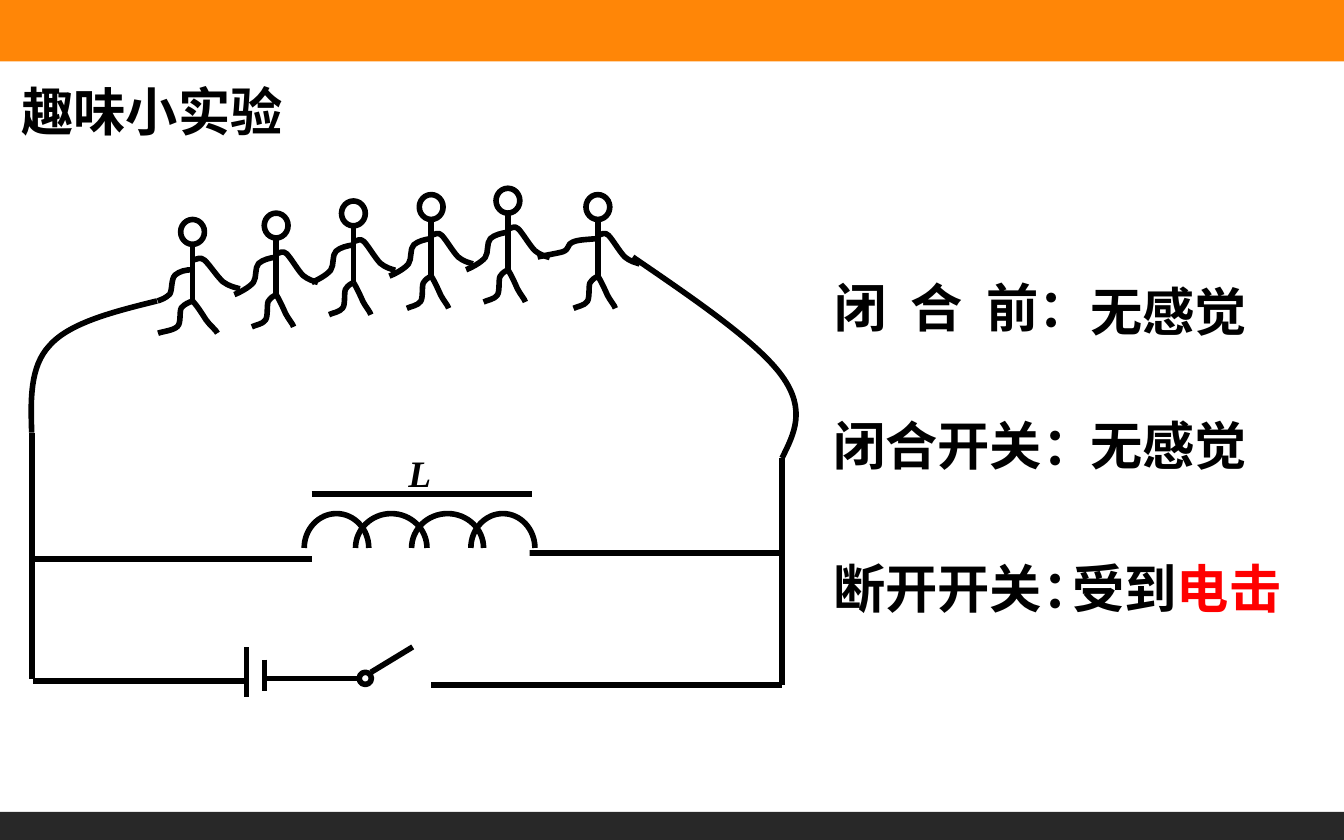
from lxml import etree
from pptx import Presentation
from pptx.dml.color import RGBColor
from pptx.enum.shapes import MSO_CONNECTOR, MSO_SHAPE
from pptx.oxml.ns import qn
from pptx.util import Cm, Pt

STRAIGHT = MSO_CONNECTOR.STRAIGHT
RECTANGLE = MSO_SHAPE.RECTANGLE
OVAL = MSO_SHAPE.OVAL

ORANGE = RGBColor(0xFF, 0x86, 0x07)
DARK_GRAY = RGBColor(0x28, 0x28, 0x28)
BLACK = RGBColor(0, 0, 0)
WHITE = RGBColor(0xFF, 0xFF, 0xFF)
RED = RGBColor(0xFF, 0, 0)

LINE_WIDTH = Pt(3)

# Limbs are Bezier chains in cm: arms start from the neck, legs from the hip.
LEFT_ARM = [(0, .36), (-.13, .38), (-.25, .41), (-.33, .48), (-.41, .56),
            (-.36, .74), (-.43, .84), (-.51, .94), (-.71, 1.04), (-.79, 1.07)]
FIRST_LEFT_ARM = [(0, .48), (-.13, .48), (-.25, .51), (-.33, .58), (-.41, .66),
                  (-.38, .86), (-.43, .94), (-.51, 1.02), (-.58, 1.04), (-.66, 1.07)]
LAST_LEFT_ARM = [(0, .36), (-.2, .38), (-.38, .38), (-.48, .43), (-.58, .46),
                 (-.53, .56), (-.66, .61), (-.76, .64), (-1.07, .69), (-1.14, .71)]
RIGHT_ARM = [(0, .3), (.08, .28), (.13, .23), (.2, .3), (.28, .38),
             (.41, .61), (.51, .71), (.61, .79), (.69, .81), (.79, .84)]
LEFT_LEG = [(0, 0), (-.05, .03), (-.1, .05), (-.15, .13), (-.18, .2),
            (-.15, .41), (-.2, .48), (-.25, .56), (-.41, .58), (-.46, .61)]
RIGHT_LEG = [(0, 0), (.08, .13), (.13, .25), (.18, .36), (.23, .46), (.32, .56), (.33, .61)]
TORSO = 1.07
HEAD_WIDTH, HEAD_HEIGHT = .45, .47

MIDDLE_NECKS = [(5.22, 4.5), (6.68, 4.27), (8.15, 4.15), (9.6, 4.03)]

LEFT_LEAD = [(.6, 8.18), (.58, 7.57), (.56, 6.93), (.94, 6.53),
             (1.32, 6.1), (2.16, 5.89), (2.97, 5.69)]
RIGHT_LEAD = [(14.78, 8.66), (15.01, 8.2), (15.24, 7.75), (14.78, 7.11),
              (14.33, 6.48), (13.13, 5.66), (11.96, 4.86)]
WIRES = [
    (4.66, 12.24, 4.66, 13.18),   # battery, long plate
    (5, 12.47, 5, 13.06),         # battery, short plate
    (5, 12.83, 6.78, 12.83),
    (7.01, 12.71, 7.8, 12.23),    # switch lever
    (8.15, 12.95, 14.78, 12.95),
    (4.67, 12.87, .62, 12.87),
    (.6, 12.83, .6, 8.18),
    (.6, 10.57, 5.89, 10.57),
    (7.85, 10.45, 14.78, 10.45),
    (14.78, 8.66, 14.78, 12.95),
    (5.89, 9.34, 10.06, 9.34),    # iron core
]
COIL_TOP, COIL_BOTTOM = 9.71, 10.36
COIL_TURNS = [(5.75, 6.97), (6.72, 8.07), (7.78, 9.14), (8.9, 10.11)]

TEXT_HEIGHT = 1.45


def add_block(slide, left, top, width, height, color):
    shape = slide.shapes.add_shape(RECTANGLE, Cm(left), Cm(top), Cm(width), Cm(height))
    shape.shadow.inherit = False
    shape.fill.solid()
    shape.fill.fore_color.rgb = color
    shape.line.fill.background()


def style_outline(shape):
    shape.shadow.inherit = False
    shape.fill.background()
    shape.line.color.rgb = BLACK
    shape.line.width = LINE_WIDTH


def add_ring(slide, left, top, width, height):
    style_outline(slide.shapes.add_shape(OVAL, Cm(left), Cm(top), Cm(width), Cm(height)))


def add_wire(slide, x1, y1, x2, y2):
    wire = slide.shapes.add_connector(STRAIGHT, Cm(x1), Cm(y1), Cm(x2), Cm(y2))
    wire.line.color.rgb = BLACK
    wire.line.width = LINE_WIDTH
    etree.SubElement(wire._element.spPr, qn("a:effectLst"))


def add_curve(slide, chain):
    """Draw a chain of cubic Beziers: each three line segments become one curve."""
    start, *controls = [(Cm(x), Cm(y)) for x, y in chain]
    builder = slide.shapes.build_freeform(*start)
    builder.add_line_segments(controls, close=False)
    shape = builder.convert_to_shape()
    outline = next(shape._element.iter(qn("a:path")))
    segments = outline.findall(qn("a:lnTo"))
    for first in range(0, len(segments), 3):
        curve = etree.SubElement(outline, qn("a:cubicBezTo"))
        for segment in segments[first:first + 3]:
            curve.append(segment[0])
            outline.remove(segment)
    style_outline(shape)


def add_limb(slide, x, y, limb, stretch=1):
    add_curve(slide, [(x + dx * stretch, y + dy) for dx, dy in limb])


def add_person(slide, x, neck, left_arm=LEFT_ARM, stride=1, reach=1):
    hip = neck + TORSO
    add_wire(slide, x, neck, x, hip)
    add_ring(slide, x - HEAD_WIDTH / 2, neck - HEAD_HEIGHT, HEAD_WIDTH, HEAD_HEIGHT)
    add_limb(slide, x, hip, LEFT_LEG, stride)
    add_limb(slide, x, hip, RIGHT_LEG, stride)
    add_limb(slide, x, neck, left_arm)
    add_limb(slide, x, neck, RIGHT_ARM, reach)


def add_coil_turn(slide, left, right):
    middle = (left + right) / 2
    handle_x = .55 * (right - left) / 2
    handle_y = COIL_BOTTOM - .55 * (COIL_BOTTOM - COIL_TOP)
    add_curve(slide, [(left, COIL_BOTTOM), (left, handle_y), (middle - handle_x, COIL_TOP),
                      (middle, COIL_TOP), (middle + handle_x, COIL_TOP),
                      (right, handle_y), (right, COIL_BOTTOM)])


def add_text(slide, left, top, width, *runs, size=28, font="Arial", italic=None):
    """Add one bold line of (text, color) runs and return its paragraph."""
    box = slide.shapes.add_textbox(Cm(left), Cm(top), Cm(width), Cm(TEXT_HEIGHT))
    box.text_frame.word_wrap = True
    paragraph = box.text_frame.paragraphs[0]
    paragraph.font.size = Pt(size)
    paragraph.font.name = font
    paragraph.font.bold = True
    paragraph.font.italic = italic
    for text, color in runs:
        run = paragraph.add_run()
        run.text = text
        run.font.color.rgb = color
    return paragraph


def add_people(slide):
    add_person(slide, 3.64, 4.62, FIRST_LEFT_ARM, stride=1.42, reach=1.13)
    for x, neck in MIDDLE_NECKS:
        add_person(slide, x, neck)
    add_person(slide, 11.3, 4.15, LAST_LEFT_ARM)


def add_circuit(slide):
    for wire in WIRES:
        add_wire(slide, *wire)
    add_ring(slide, 6.79, 12.71, .23, .23)
    add_curve(slide, LEFT_LEAD)
    add_curve(slide, RIGHT_LEAD)
    add_block(slide, 5.97, 10.13, 4.04, .91, WHITE)
    for left, right in COIL_TURNS:
        add_coil_turn(slide, left, right)
    add_text(slide, 7.47, 8.38, 1.47, ("L", BLACK),
             size=20, font="Times New Roman", italic=True)


def add_observations(slide):
    before = add_text(slide, 15.52, 5.08, 5.72, ("闭 合 ", BLACK), ("前：", BLACK))
    before.runs[0]._r.get_or_add_rPr().set("spc", "320")
    add_text(slide, 15.5, 7.69, 5.72, ("闭合开关：", BLACK))
    add_text(slide, 15.5, 10.39, 5.72, ("断开开关：", BLACK))
    for top in (5.15, 7.69):
        add_text(slide, 20.36, top, 4.01, ("无感觉", BLACK))
    add_text(slide, 20.02, 10.39, 5.18, ("受到", BLACK), ("电击", RED))


def main():
    presentation = Presentation()
    presentation.slide_width = Cm(25.4)
    presentation.slide_height = Cm(15.88)
    slide = presentation.slides.add_slide(presentation.slide_layouts[6])
    add_block(slide, 0, -.1, 25.4, 1.26, ORANGE)
    add_block(slide, 0, 15.35, 25.4, .53, DARK_GRAY)
    add_people(slide)
    add_circuit(slide)
    add_text(slide, .16, 1.37, 14.05, ("趣味小实验", BLACK))
    add_observations(slide)
    presentation.save("out.pptx")


if __name__ == "__main__":
    main()
